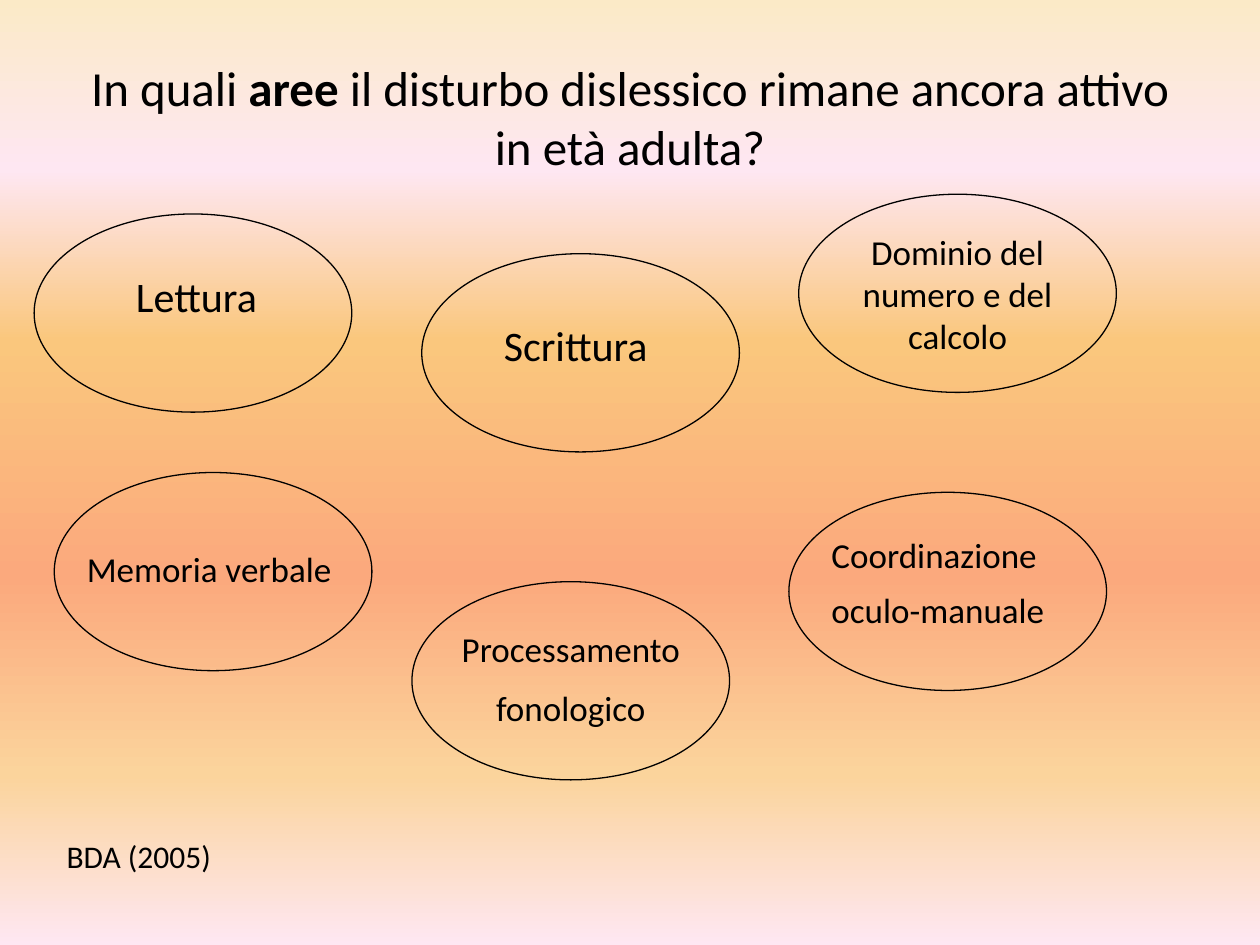
from lxml.etree import SubElement
from pptx import Presentation
from pptx.dml.color import RGBColor
from pptx.enum.shapes import MSO_SHAPE
from pptx.enum.text import MSO_ANCHOR, MSO_AUTO_SIZE, PP_ALIGN
from pptx.oxml.ns import qn
from pptx.util import Pt

COLORS = {
    "ink": "000000",
    "cream": "FBEAC7",
    "pink": "FEE7F2",
    "amber": "FAC77D",
    "coral": "FBA97D",
    "sand": "FBD49C",
}
STOPS = [(0, "cream"), (18, "pink"), (36, "amber"),
         (61, "coral"), (82, "sand"), (100, "pink")]
OVAL = (181.5, 113.25)
LEFT, MID = PP_ALIGN.LEFT, PP_ALIGN.CENTER

# Oval corner, label box, label lines, size, alignment, line spacing
AREAS = [
    ((19.5, 122.25), (70.6, 151.2, 152.6, 36), ["Lettura"], 24, LEFT, 1),
    ((241, 145), (280.8, 179.2, 113, 36), ["Scrittura"], 24, LEFT, 1),
    ((456.4, 111), (468, 128.2, 158.4, 79.2),
     ["Dominio del numero e del calcolo"], 20, MID, 1),
    ((31, 270), (42.5, 309.6, 170, 31), ["Memoria verbale"], 20, LEFT, 1),
    ((235.4, 332.4), (247, 355, 158.4, 67),
     ["Processamento", "fonologico"], 20, MID, 1),
    ((450.8, 281.3), (468, 303.8, 147.6, 62.6),
     ["Coordinazione", "oculo-manuale"], 20, LEFT, 0.9),
]


def rgb(name):
    return RGBColor.from_string(COLORS[name])


def assign(item, values):
    for name, value in values.items():
        setattr(item, name, value)


def paint(slide):
    """Fill the background with the top-to-bottom gradient."""
    fill = slide.background.fill
    fill.gradient()
    fill.gradient_angle = 270
    stops = slide.element.find(".//" + qn("a:gsLst"))
    for stop in list(stops):
        stops.remove(stop)
    for place, name in STOPS:
        stop = SubElement(stops, qn("a:gs"), pos=str(place * 1000))
        SubElement(stop, qn("a:srgbClr"), val=COLORS[name])


def add_oval(slide, spot):
    oval = slide.shapes.add_shape(MSO_SHAPE.OVAL, *map(Pt, spot + OVAL))
    oval.shadow.inherit = False
    oval.fill.background()
    oval.line.color.rgb = rgb("ink")
    oval.line.width = Pt(0.75)


def add_text(slide, box, lines, size, align=LEFT, pitch=1, **frame):
    """Add one paragraph a line; a line is a string or (text, bold) runs."""
    text = slide.shapes.add_textbox(*map(Pt, box)).text_frame
    assign(text, {"word_wrap": True,
                  "auto_size": MSO_AUTO_SIZE.SHAPE_TO_FIT_TEXT, **frame})
    for i, line in enumerate(lines):
        para = text.add_paragraph() if i else text.paragraphs[0]
        assign(para, {"alignment": align, "line_spacing": pitch,
                      "space_before": Pt(size / 2 if i else 0)})
        for words, bold in [(line, False)] if isinstance(line, str) else line:
            run = para.add_run()
            run.text = words
            assign(run.font, {"name": "Calibri", "size": Pt(size),
                              "bold": bold})
            run.font.color.rgb = rgb("ink")


def main():
    deck = Presentation()
    assign(deck, {"slide_width": Pt(720), "slide_height": Pt(540)})
    slide = deck.slides.add_slide(deck.slide_layouts[6])
    paint(slide)
    title = [("In quali ", False), ("aree", True),
             (" il disturbo dislessico rimane ancora attivo in età adulta?",
              False)]
    add_text(slide, (36, 21.6, 648, 90), [title], 28, MID,
             vertical_anchor=MSO_ANCHOR.MIDDLE, auto_size=MSO_AUTO_SIZE.NONE)
    for spot, *label in AREAS:
        add_oval(slide, spot)
        add_text(slide, *label)
    add_text(slide, (31, 474.5, 595.4, 28.8), ["BDA (2005)"], 18)
    deck.save("out.pptx")


if __name__ == "__main__":
    main()
